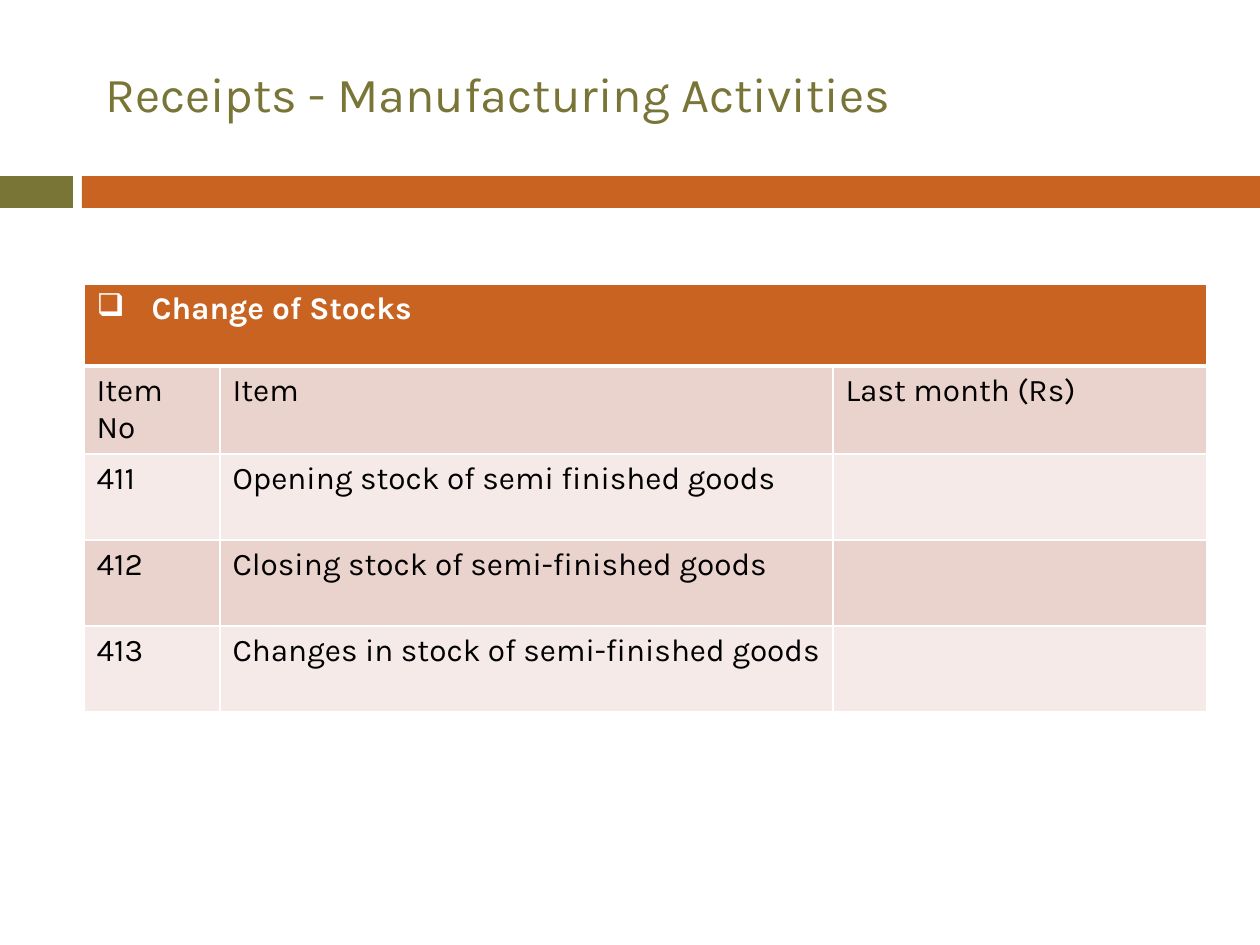
from lxml import etree
from pptx import Presentation
from pptx.dml.color import RGBColor
from pptx.enum.shapes import MSO_SHAPE
from pptx.enum.text import MSO_ANCHOR
from pptx.oxml.ns import qn
from pptx.util import Pt

PX = 914400 // 126
RECTANGLE = MSO_SHAPE.RECTANGLE
MIDDLE = MSO_ANCHOR.MIDDLE
COLORS = {
    "olive": "787537",
    "orange": "C86322",
    "rose": "EBD3CD",
    "pale": "F5EAE8",
    "white": "FFFFFF",
    "black": "000000",
}


def write_text(frame, text, size=18, color="black", bold=False):
    paragraph = frame.paragraphs[0]
    run = paragraph.add_run()
    run.text = text
    run.font.name = "Karla"
    run.font.size = Pt(size)
    run.font.bold = bold
    run.font.color.rgb = RGBColor.from_string(COLORS[color])
    return paragraph


def format_cell(cell, fill, top=1, bottom=1):
    """Draw white borders, with widths in points, and then fill the cell."""
    properties = cell._tc.get_or_add_tcPr()
    for side, width in (("L", 1), ("R", 1), ("T", top), ("B", bottom)):
        border = etree.SubElement(properties, qn(f"a:ln{side}"), w=str(Pt(width)))
        solid = etree.SubElement(border, qn("a:solidFill"))
        etree.SubElement(solid, qn("a:srgbClr"), val=COLORS["white"])
    cell.fill.solid()
    cell.fill.fore_color.rgb = RGBColor.from_string(COLORS[fill])


prs = Presentation()
prs.slide_width = 1260 * PX
prs.slide_height = 945 * PX
slide = prs.slides.add_slide(prs.slide_layouts[6])

# Two-part band under the title
for left, width, color in ((0, 73, "olive"), (82, 1178, "orange")):
    band = slide.shapes.add_shape(RECTANGLE, left * PX, 176 * PX, width * PX, 32 * PX)
    band.shadow.inherit = False
    band.fill.solid()
    band.fill.fore_color.rgb = RGBColor.from_string(COLORS[color])
    band.line.fill.background()

title = slide.shapes.add_textbox(93 * PX, 25 * PX, 1115 * PX, 136 * PX).text_frame
title.word_wrap = True
title.vertical_anchor = MIDDLE
write_text(title, "Receipts - Manufacturing Activities", size=27.9, color="olive")

# Stock table
rows = [
    ("Item No", "Item", "Last month (Rs)"),
    ("411", "Opening stock of semi finished goods", ""),
    ("412", "Closing stock of semi-finished goods", ""),
    ("413", "Changes in stock of semi-finished goods", ""),
]
column_widths = [136, 613, 374]
heading_height, row_height = 82, 86
stocks = slide.shapes.add_table(
    len(rows) + 1, len(column_widths), 84 * PX, 284 * PX,
    sum(column_widths) * PX, (heading_height + row_height * len(rows)) * PX,
).table
stocks.first_row = False
stocks.horz_banding = False
for column, width in zip(stocks.columns, column_widths):
    column.width = width * PX

stocks.rows[0].height = heading_height * PX
for heading_cell in stocks.rows[0].cells:
    format_cell(heading_cell, "orange", bottom=3)
heading = stocks.cell(0, 0)
heading.merge(stocks.cell(0, len(column_widths) - 1))
heading_paragraph = write_text(heading.text_frame, "Change of Stocks", color="white", bold=True)
bullet_properties = heading_paragraph._p.get_or_add_pPr()
bullet_properties.set("marL", str(55 * PX))
bullet_properties.set("indent", str(-55 * PX))
etree.SubElement(bullet_properties, qn("a:buChar"), char="❑")

for number, row in enumerate(rows, start=1):
    stocks.rows[number].height = row_height * PX
    for position, text in enumerate(row):
        cell = stocks.cell(number, position)
        format_cell(cell, "rose" if number % 2 else "pale", top=3 if number == 1 else 1)
        if text:
            write_text(cell.text_frame, text)

prs.save("out.pptx")
